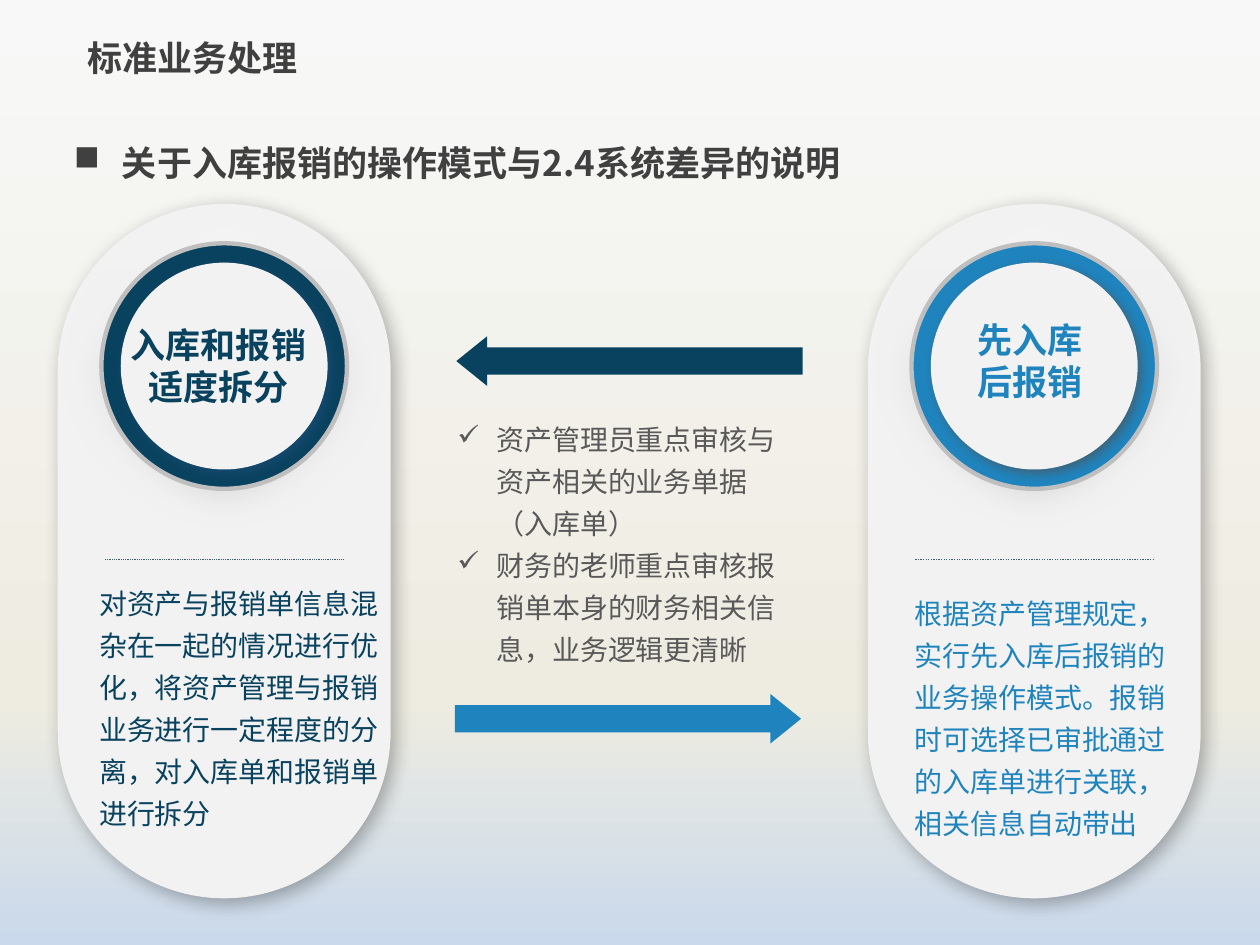
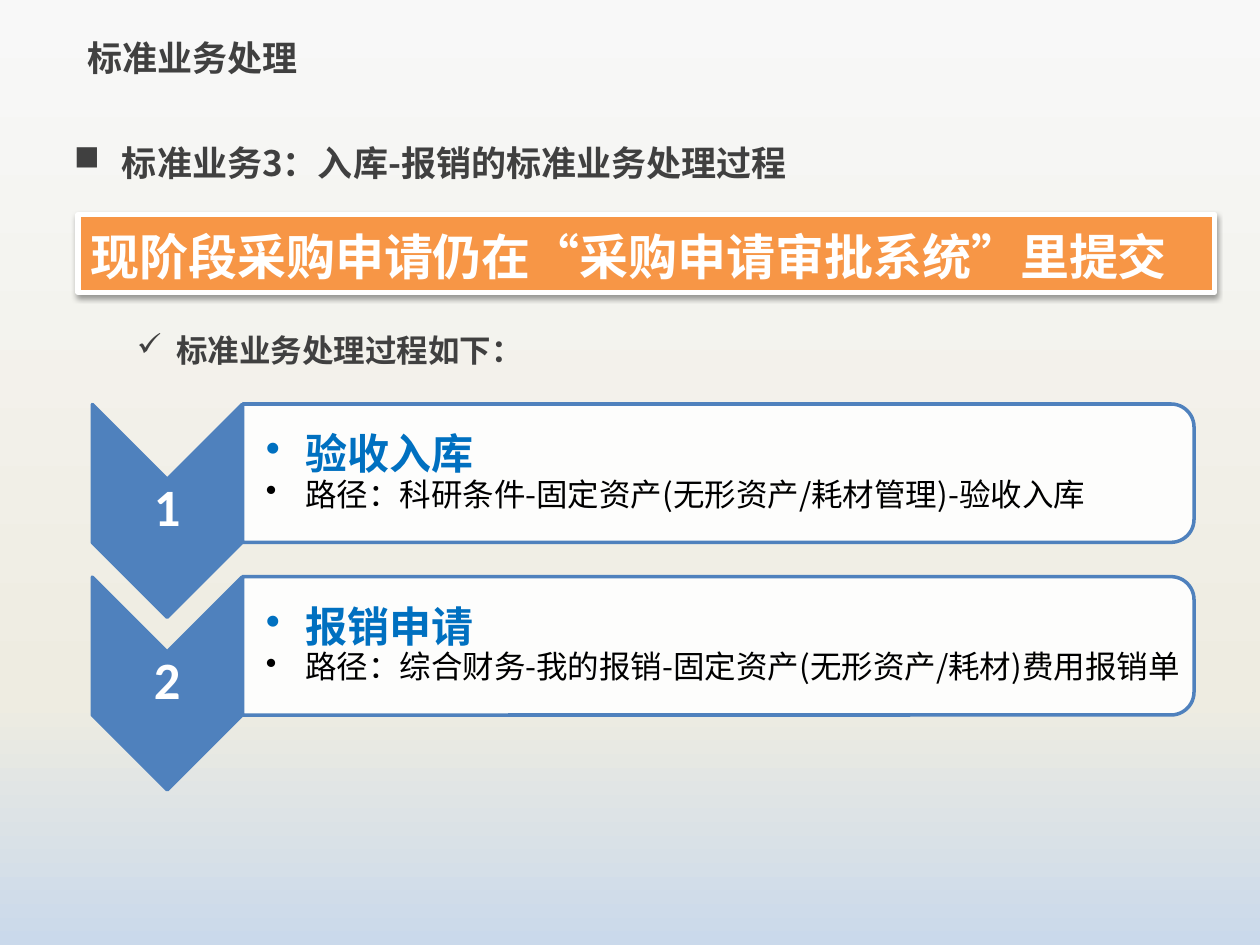
"""Build two slides on the standard handling of stock-in and reimbursement."""
from copy import deepcopy

from lxml.etree import SubElement
from pptx import Presentation
from pptx.dml.color import RGBColor
from pptx.enum.dml import MSO_LINE
from pptx.enum.shapes import MSO_CONNECTOR, MSO_SHAPE as SHAPE
from pptx.enum.text import MSO_ANCHOR as ANCHOR, PP_ALIGN as ALIGN
from pptx.oxml.ns import qn
from pptx.util import Cm, Pt

rgb = RGBColor.from_string
NAVY, BLUE, STEEL, DARK = "09425E", "1F84BE", "4F81BD", "404040"
PALE, WHITE, SILVER = "F2F2F2", "FFFFFF", "BFBFBF"
HEADING = dict(name="Noto Sans CJK SC", size=Pt(20), bold=True)
BODY = dict(name="Calibri", size=Pt(16), bold=False)
CIRCLE_LABEL = dict(name="Calibri", size=Pt(20), bold=True)
STEP_NUMBER = dict(name="Calibri", size=Pt(30), bold=True)


def draw(page, kind, center, size, fill, line=None, shadow=None, turn=0):
    """Add a shape around its center; shadow is colour, opacity %, blur, distance and angle."""
    (x, y), (width, height) = center, size
    shape = page.shapes.add_shape(kind, Cm(x - width / 2), Cm(y - height / 2), Cm(width), Cm(height))
    shape.rotation = turn
    shape.shadow.inherit = False
    shape.fill.solid()
    shape.fill.fore_color.rgb = rgb(fill)
    if line:
        shape.line.color.rgb = rgb(line[0])
        shape.line.width = Pt(line[1])
    else:
        shape.line.fill.background()
    if shadow:
        color, opacity, blur, distance, angle = shadow
        effects = shape._element.spPr.find(qn("a:effectLst"))
        outer = SubElement(effects, qn("a:outerShdw"), blurRad=str(Pt(blur)), dist=str(Pt(distance)),
                           dir=str(angle * 60000), algn="ctr", rotWithShape="0")
        tone = SubElement(outer, qn("a:srgbClr"), val=color)
        SubElement(tone, qn("a:alpha"), val=str(opacity * 1000))
    return shape


def write(frame, text, color, look, bullet=None, indent=0.79, **layout):
    """Put one formatted paragraph at the end of a text frame."""
    frame.word_wrap = True
    para = frame.add_paragraph() if frame.text else frame.paragraphs[0]
    for name, value in {"alignment": ALIGN.LEFT, **layout}.items():
        setattr(para, name, value)
    if bullet:
        props = para._p.get_or_add_pPr()
        props.set("marL", str(Cm(indent)))
        props.set("indent", str(-Cm(indent)))
        SubElement(props, qn("a:buChar"), char=bullet)
    span = para.add_run()
    span.text = text
    for name, value in look.items():
        setattr(span.font, name, value)
    span.font.color.rgb = rgb(color)
    SubElement(span._r.rPr, qn("a:ea"), typeface=look["name"])


deck = Presentation()
deck.slide_width, deck.slide_height = Cm(25.4), Cm(19.05)

backdrop = deck.slide_master.background.fill
backdrop.gradient()
backdrop.gradient_angle = 270
stop_list = deck.slide_master.element.find(".//" + qn("a:gsLst"))
stop_list.insert(1, deepcopy(stop_list[0]))
for stop, (position, color) in zip(backdrop.gradient_stops, [(0, "F8F8F8"), (0.74, "EEECE1"), (1, "CAD9EB")]):
    stop.position = position
    stop.color.rgb = rgb(color)

pages = []
for heading in ["关于入库报销的操作模式与2.4系统差异的说明", "标准业务3：入库-报销的标准业务处理过程"]:
    page = deck.slides.add_slide(deck.slide_layouts[5])
    title = page.shapes.title
    title.left, title.top, title.width, title.height = Cm(1.5), Cm(0.3), Cm(22.58), Cm(1.7)
    title.text_frame.vertical_anchor = ANCHOR.MIDDLE
    write(title.text_frame, "标准业务处理", DARK, HEADING)
    box = page.shapes.add_textbox(Cm(1.24), Cm(2.72), Cm(22.86), Cm(1.45))
    write(box.text_frame, heading, DARK, HEADING, bullet="■", indent=0.97)
    pages.append(page)
modes, process = pages

panels = [
    (4.52, NAVY, "1F4E79", 0.5,
     "入库和报销适度拆分", (2.31, 6.4, 4.19, 1.96), ALIGN.CENTER,
     "对资产与报销单信息混杂在一起的情况进行优化，将资产管理与报销业务进行一定程度的分离，对入库单和报销单进行拆分",
     (1.75, 11.53, 6.15, 6.17)),
    (20.85, BLUE, "525252", 0.75,
     "先入库后报销", (19.46, 6.3, 3.2, 1.96), ALIGN.LEFT,
     "根据资产管理规定，实行先入库后报销的业务操作模式。报销时可选择已审批通过的入库单进行关联，相关信息自动带出",
     (18.19, 11.73, 5.72, 5.31)),
]
for x, color, shade, rule_width, label, label_area, align, detail, detail_area in panels:
    hub = (x, 7.38)
    pill = draw(modes, SHAPE.ROUNDED_RECTANGLE, (x, 11.11), (6.71, 14), PALE, shadow=("000000", 29, 11, 4, 45))
    pill.adjustments[0] = 0.5
    halo = draw(modes, SHAPE.OVAL, hub, (6.83, 6.83), WHITE)
    halo.fill.gradient()
    halo.fill.gradient_angle = 270
    for stop, tone in zip(halo.fill.gradient_stops, [WHITE, SILVER]):
        stop.color.rgb = rgb(tone)
    SubElement(halo._element.spPr.find(qn("a:effectLst")), qn("a:softEdge"), rad=str(Cm(0.88)))
    draw(modes, SHAPE.OVAL, hub, (4.95, 4.95), color, line=(SILVER, 2.5))
    draw(modes, SHAPE.OVAL, hub, (4.17, 4.17), PALE, shadow=(shade, 64, 6, 3, 45))

    rule = modes.shapes.add_connector(MSO_CONNECTOR.STRAIGHT, Cm(x - 2.4), Cm(11.28), Cm(x + 2.4), Cm(11.28))
    rule.line.color.rgb = rgb("3C5E67")
    rule.line.width = Pt(rule_width)
    rule.line.dash_style = MSO_LINE.ROUND_DOT
    SubElement(rule._element.spPr, qn("a:effectLst"))

    box = modes.shapes.add_textbox(*map(Cm, label_area))
    write(box.text_frame, label, color, CIRCLE_LABEL, alignment=align)
    box = modes.shapes.add_textbox(*map(Cm, detail_area))
    write(box.text_frame, detail, color, BODY, line_spacing=1.25)

for kind, center, color in [(SHAPE.LEFT_ARROW, (12.69, 7.28), NAVY), (SHAPE.RIGHT_ARROW, (12.66, 14.49), BLUE)]:
    arrow = draw(modes, kind, center, (6.98, 1), color)
    arrow.adjustments[0], arrow.adjustments[1] = 0.55, 0.62

box = modes.shapes.add_textbox(Cm(8.97), Cm(8.23), Cm(7.34), Cm(5.31))
for point in ["资产管理员重点审核与资产相关的业务单据（入库单）", "财务的老师重点审核报销单本身的财务相关信息，业务逻辑更清晰"]:
    write(box.text_frame, point, "595959", BODY, bullet="✓", line_spacing=1.25)

banner = draw(process, SHAPE.RECTANGLE, (13.03, 5.11), (22.91, 1.57), "F79646",
              line=(WHITE, 3), shadow=("000000", 38, 3.1, 1.6, 90))
banner.text_frame.vertical_anchor = ANCHOR.MIDDLE
write(banner.text_frame, "现阶段采购申请仍在“采购申请审批系统”里提交", WHITE,
      {**HEADING, "size": Pt(28)}, line_spacing=1.1)

box = process.shapes.add_textbox(Cm(2.51), Cm(6.55), Cm(21.5), Cm(1.2))
write(box.text_frame, "标准业务处理过程如下：", DARK, {**HEADING, "size": Pt(18)}, bullet="✓")

steps = [
    ("验收入库", "路径：科研条件-固定资产(无形资产/耗材管理)-验收入库"),
    ("报销申请", "路径：综合财务-我的报销-固定资产(无形资产/耗材)费用报销单"),
]
for index, (name, route) in enumerate(steps):
    y = 9.54 + 3.48 * index
    draw(process, SHAPE.CHEVRON, (3.37, y + 0.76), (4.29, 3.02), STEEL, line=(STEEL, 2), turn=90)
    number = process.shapes.add_textbox(Cm(1.86), Cm(y + 0.09), Cm(3.02), Cm(1.3)).text_frame
    card = draw(process, SHAPE.ROUND_2_SAME_RECTANGLE, (14.48, y), (2.79, 19.18), WHITE, line=(STEEL, 2), turn=90)
    SubElement(card._element.spPr.find(qn("a:solidFill"))[0], qn("a:alpha"), val="90000")
    content = process.shapes.add_textbox(Cm(4.88), Cm(y - 1.26), Cm(19.05), Cm(2.52)).text_frame
    for frame, left in [(number, 0.05), (content, 0.48)]:
        frame.vertical_anchor = ANCHOR.MIDDLE
        frame.margin_left = Cm(left)
        frame.margin_top = frame.margin_right = frame.margin_bottom = Cm(0.05)
    write(number, str(index + 1), WHITE, STEP_NUMBER, alignment=ALIGN.CENTER, line_spacing=0.9)
    write(content, name, "0070C0", {**HEADING, "size": Pt(24)}, bullet="•", line_spacing=0.9)
    write(content, route, "000000", {**HEADING, "size": Pt(18), "bold": False}, bullet="•", line_spacing=0.9)

deck.save("out.pptx")
